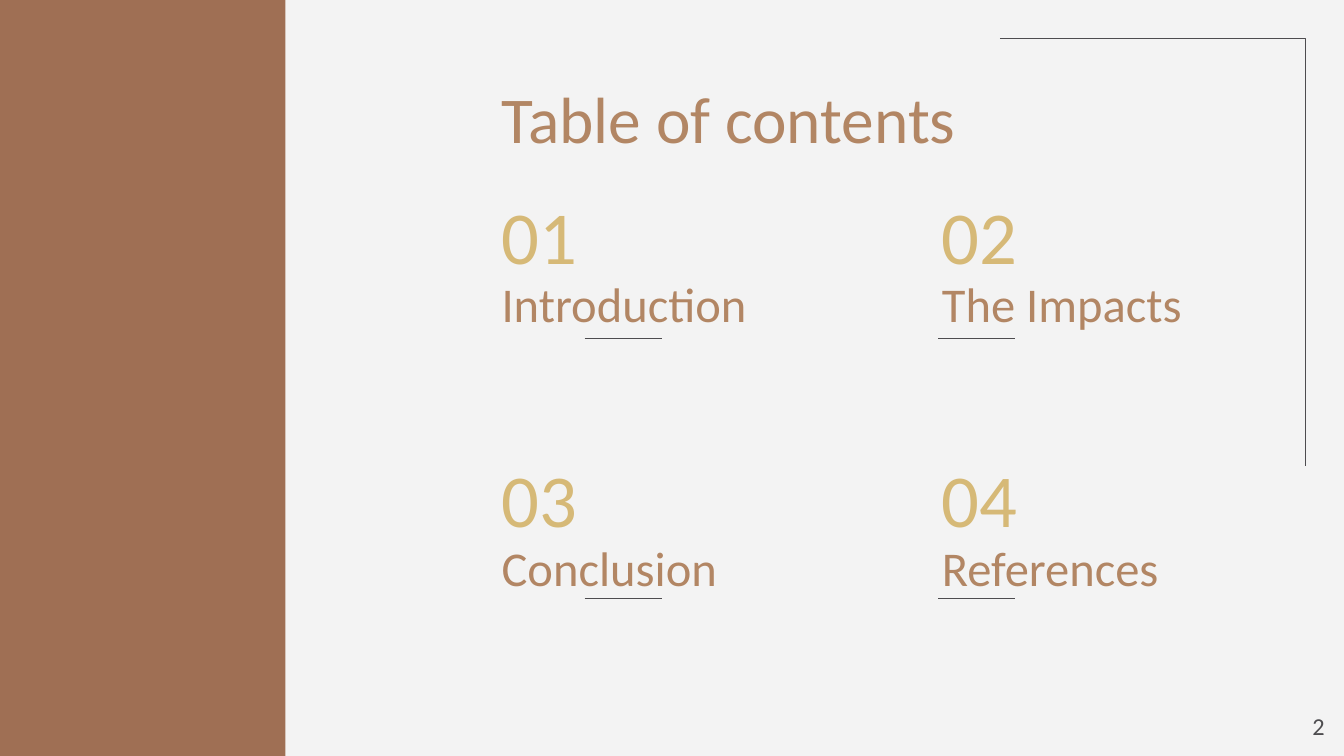
from dataclasses import dataclass

import pptx
import pptx.dml.color
import pptx.enum.shapes
import pptx.enum.text
import pptx.oxml.ns
import pptx.slide
import pptx.util
from lxml import etree

RGBColor = pptx.dml.color.RGBColor
BACKGROUND = RGBColor(0xF3, 0xF3, 0xF3)
BROWN = RGBColor(0x9F, 0x6F, 0x54)
TAN = RGBColor(0xB2, 0x86, 0x64)
GOLD = RGBColor(0xD6, 0xB9, 0x77)
CHARCOAL = RGBColor(0x4D, 0x4C, 0x4F)

FONT = "Calibri"
SLIDE_WIDTH = pptx.util.Inches(10)
SLIDE_HEIGHT = pptx.util.Emu(SLIDE_WIDTH * 9 // 16)

# Square grid cells, one hundred across the slide.
CELL = SLIDE_WIDTH / 100
LEFT = 36.34
COLUMN_PITCH = 32.76
ROW_PITCH = 19.6
NUMBER_TOP = 13.1
LABEL_TOP = 19.4
RULE_LEFT = 43.5
RULE_TOP = 25.2
RULE_WIDTH = 5.75
RULE_COLUMN_PITCH = 26.3
RULE_ROW_PITCH = 19.33


@dataclass(frozen=True)
class Box:
    left: float
    top: float
    width: float
    height: float


@dataclass(frozen=True)
class Entry:
    number: str
    label: str
    column: int
    row: int
    label_width: float


ENTRIES = (
    Entry("01", "Introduction", 0, 0, 24.3),
    Entry("02", "The Impacts", 1, 0, 26.2),
    Entry("03", "Conclusion", 0, 1, 22.8),
    Entry("04", "References", 1, 1, 22.8),
)


def cells(count: float) -> pptx.util.Emu:
    return pptx.util.Emu(round(count * CELL))


def add_text(
    slide: pptx.slide.Slide,
    text: str,
    box: Box,
    *,
    size: float,
    color: RGBColor,
    align=pptx.enum.text.PP_ALIGN.LEFT,
    anchor=pptx.enum.text.MSO_ANCHOR.TOP,
) -> None:
    frame = slide.shapes.add_textbox(
        cells(box.left), cells(box.top), cells(box.width), cells(box.height)
    ).text_frame
    frame.word_wrap = True
    frame.vertical_anchor = anchor
    frame.margin_left = frame.margin_right = cells(1)
    frame.margin_top = frame.margin_bottom = cells(1)
    paragraph = frame.paragraphs[0]
    paragraph.alignment = align
    run = paragraph.add_run()
    run.text = text
    run.font.name = FONT
    run.font.size = pptx.util.Pt(size)
    run.font.color.rgb = color


def style_line(line) -> None:
    line.color.rgb = CHARCOAL
    line.width = pptx.util.Pt(0.75)


def add_side_panel(slide: pptx.slide.Slide) -> None:
    panel = slide.shapes.add_shape(
        pptx.enum.shapes.MSO_SHAPE.RECTANGLE, 0, 0, cells(21.24), SLIDE_HEIGHT
    )
    panel.shadow.inherit = False
    panel.fill.solid()
    panel.fill.fore_color.rgb = BROWN
    panel.line.fill.background()


def add_corner_bracket(slide: pptx.slide.Slide) -> None:
    left, right, top, bottom = (cells(n) for n in (74.4, 97.15, 2.85, 34.65))
    builder = slide.shapes.build_freeform(left, top)
    builder.add_line_segments([(right, top), (right, bottom)], close=False)
    bracket = builder.convert_to_shape()
    bracket.shadow.inherit = False
    bracket.fill.background()
    style_line(bracket.line)


def add_rule(slide: pptx.slide.Slide, left: float, top: float) -> None:
    rule = slide.shapes.add_connector(
        pptx.enum.shapes.MSO_CONNECTOR.STRAIGHT,
        cells(left), cells(top), cells(left + RULE_WIDTH), cells(top),
    )
    style_line(rule.line)
    etree.SubElement(rule._element.spPr, pptx.oxml.ns.qn("a:effectLst"))


def add_entry(slide: pptx.slide.Slide, entry: Entry) -> None:
    left = LEFT + entry.column * COLUMN_PITCH
    drop = entry.row * ROW_PITCH
    add_text(slide, entry.number, Box(left, NUMBER_TOP + drop, 13.9, 6.5),
             size=40, color=GOLD)
    add_text(slide, entry.label,
             Box(left, LABEL_TOP + drop, entry.label_width, 5.8),
             size=26, color=TAN)
    add_rule(slide, RULE_LEFT + entry.column * RULE_COLUMN_PITCH,
             RULE_TOP + entry.row * RULE_ROW_PITCH)


def main() -> None:
    presentation = pptx.Presentation()
    presentation.slide_width = SLIDE_WIDTH
    presentation.slide_height = SLIDE_HEIGHT
    slide = presentation.slides.add_slide(presentation.slide_layouts[6])
    slide.background.fill.solid()
    slide.background.fill.fore_color.rgb = BACKGROUND

    add_side_panel(slide)
    add_corner_bracket(slide)
    add_text(slide, "Table of contents", Box(LEFT, 5.6, 41.2, 6.3),
             size=35, color=TAN, anchor=pptx.enum.text.MSO_ANCHOR.MIDDLE)
    for entry in ENTRIES:
        add_entry(slide, entry)
    add_text(slide, "2", Box(93.55, 51.95, 6, 4.3), size=13, color=CHARCOAL,
             align=pptx.enum.text.PP_ALIGN.RIGHT)
    presentation.save("out.pptx")


if __name__ == "__main__":
    main()
